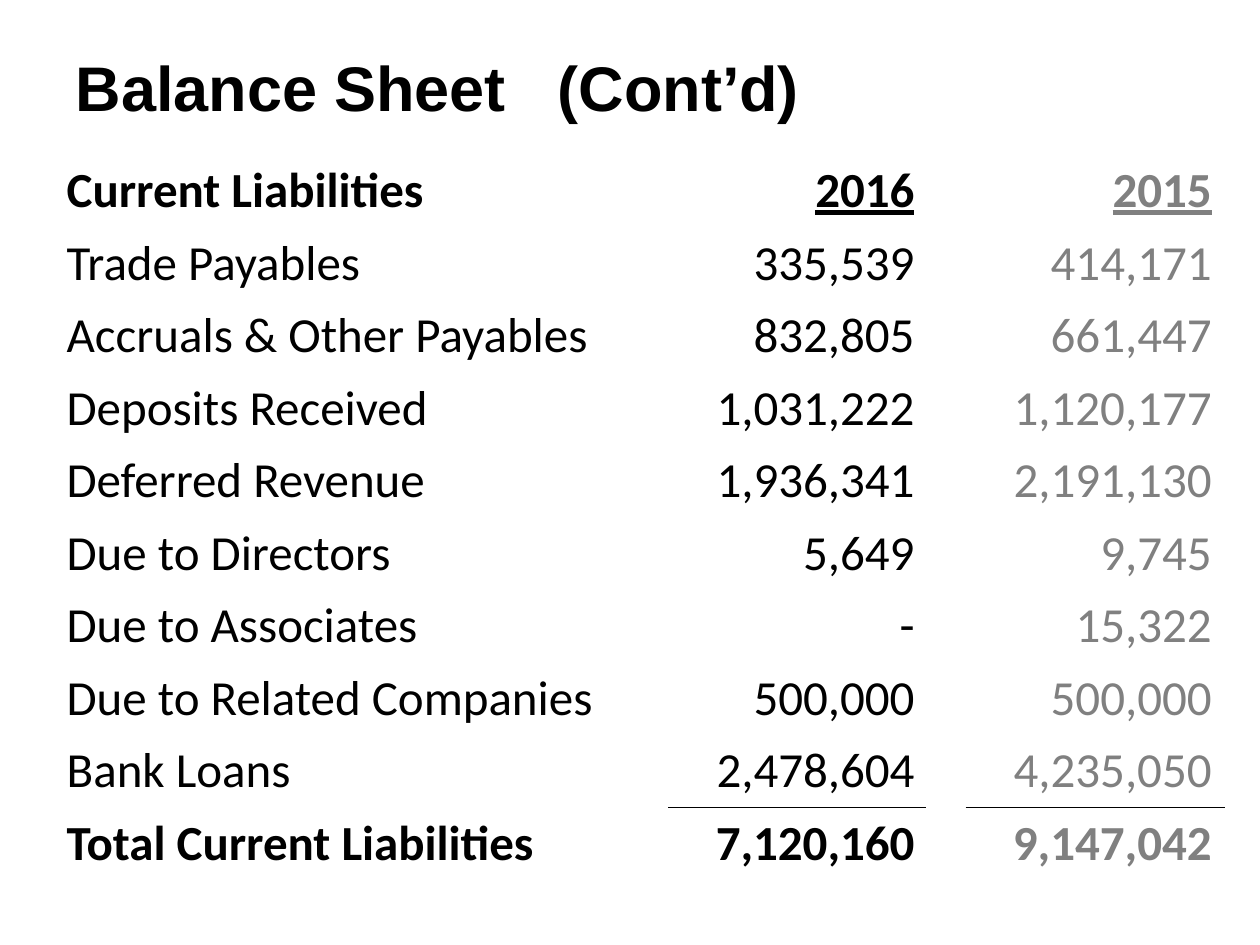
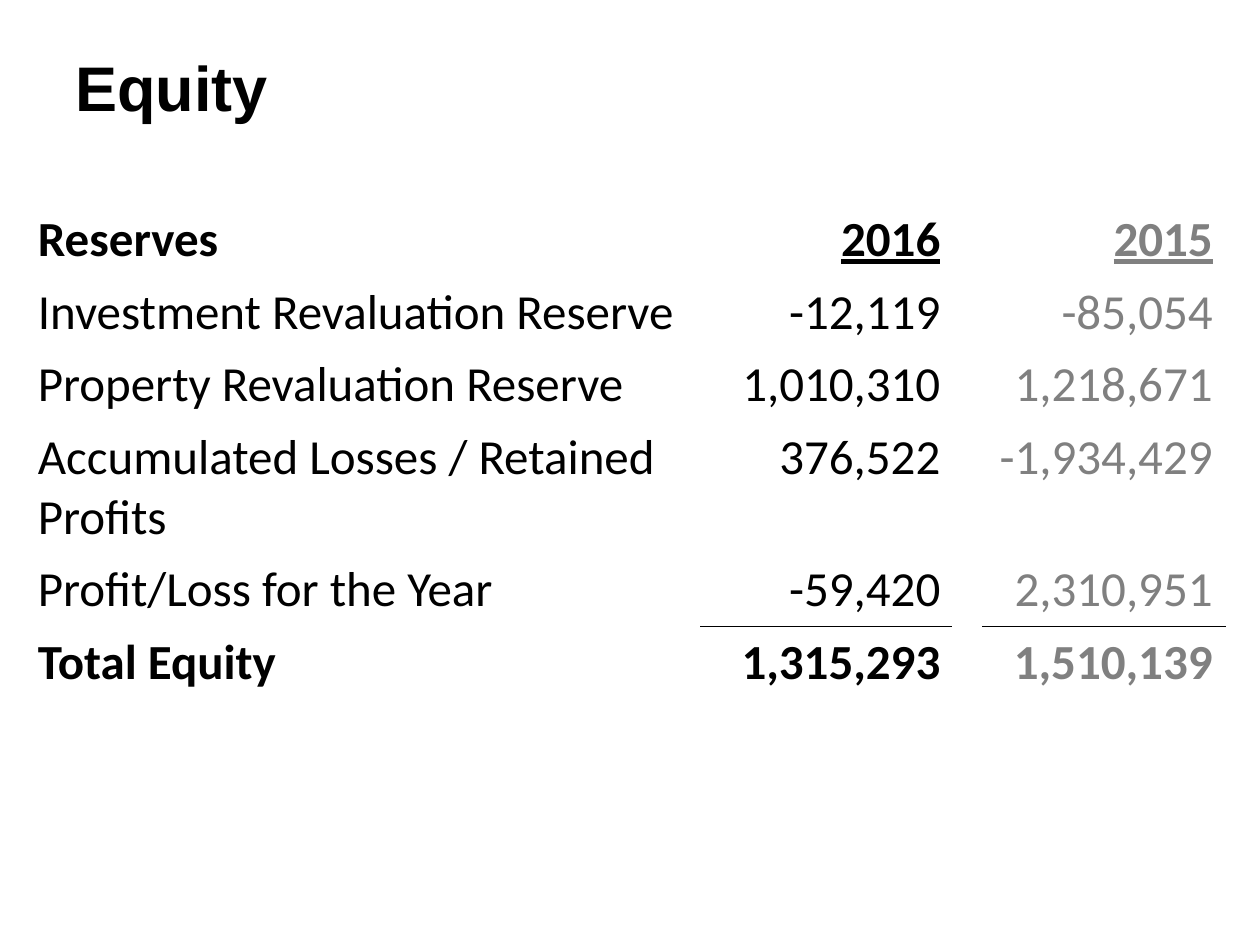
from dataclasses import dataclass

from lxml import etree
from pptx import Presentation
from pptx import table as tbl
from pptx import util as u
from pptx.dml import color
from pptx.enum import text
from pptx.oxml import ns
from pptx.presentation import Presentation as Deck
from pptx.slide import Slide

# Shared style
COLORS = {"current": "000000", "previous": "808080", "rule": "000000"}
TITLE_FONT, TABLE_FONT = "Arial", "Calibri"
TITLE_SIZE, TABLE_SIZE = u.Pt(36), u.Pt(28)
ROW_HEIGHT = u.Cm(1.44)
RULE_WIDTH = u.Pt(1)
TITLE_TAB = u.Cm(9.72)
LABEL, CURRENT, PREVIOUS = 0, 1, 3  # table columns; column 2 is a gap


@dataclass(frozen=True)
class Statement:
    """A slide with a heading row, item rows and a total row."""
    title: str
    left: float
    top: float
    column_widths: tuple[float, ...]
    rows: tuple[tuple[str, str, str], ...]


STATEMENTS = (
    Statement("Balance Sheet\t(Cont’d)", 1.09, 3.12, (12.4, 5.2, 0.79, 5.2), (
        ("Current Liabilities", "2016", "2015"),
        ("Trade Payables", "335,539", "414,171"),
        ("Accruals & Other Payables", "832,805", "661,447"),
        ("Deposits Received", "1,031,222", "1,120,177"),
        ("Deferred Revenue", "1,936,341", "2,191,130"),
        ("Due to Directors", "5,649", "9,745"),
        ("Due to Associates", "-", "15,322"),
        ("Due to Related Companies", "500,000", "500,000"),
        ("Bank Loans", "2,478,604", "4,235,050"),
        ("Total Current Liabilities", "7,120,160", "9,147,042"),
    )),
    Statement("Equity", 0.51, 4.11, (13.62, 5.08, 0.61, 4.88), (
        ("Reserves", "2016", "2015"),
        ("Investment Revaluation Reserve", "-12,119", "-85,054"),
        ("Property Revaluation Reserve", "1,010,310", "1,218,671"),
        ("Accumulated Losses / Retained Profits", "376,522", "-1,934,429"),
        ("Profit/Loss for the Year", "-59,420", "2,310,951"),
        ("Total Equity", "1,315,293", "1,510,139"),
    )),
)


def add_title(slide: Slide, title: str) -> None:
    shape = slide.shapes.title
    shape.left, shape.top = u.Cm(1.27), u.Cm(0.74)
    shape.width, shape.height = u.Cm(24.13), u.Cm(2.01)
    frame = shape.text_frame
    frame.text = title
    frame.vertical_anchor = text.MSO_ANCHOR.MIDDLE
    paragraph = frame.paragraphs[0]
    paragraph.alignment = text.PP_ALIGN.LEFT
    if "\t" in title:
        properties = paragraph._p.get_or_add_pPr()
        tabs = etree.SubElement(properties, ns.qn("a:tabLst"))
        etree.SubElement(tabs, ns.qn("a:tab"), pos=str(int(TITLE_TAB)), algn="l")
    font = paragraph.font
    font.name, font.size, font.bold = TITLE_FONT, TITLE_SIZE, True
    font.color.rgb = color.RGBColor.from_string(COLORS["current"])


def add_rule(cell: tbl._Cell, side: str) -> None:
    """Draw a border on one side of a cell: lnT or lnB."""
    line = etree.Element(ns.qn(f"a:{side}"), w=str(int(RULE_WIDTH)))
    fill = etree.SubElement(line, ns.qn("a:solidFill"))
    etree.SubElement(fill, ns.qn("a:srgbClr"), val=COLORS["rule"])
    cell._tc.get_or_add_tcPr().insert(0, line)


def fill_cell(cell: tbl._Cell, value: str, column: int,
              bold: bool, underline: bool) -> None:
    cell.text = value
    paragraph = cell.text_frame.paragraphs[0]
    is_label = column == LABEL
    paragraph.alignment = text.PP_ALIGN.LEFT if is_label else text.PP_ALIGN.RIGHT
    font = paragraph.font
    font.name, font.size, font.bold = TABLE_FONT, TABLE_SIZE, bold
    font.underline = underline and not is_label
    shade = "previous" if column == PREVIOUS else "current"
    font.color.rgb = color.RGBColor.from_string(COLORS[shade])


def add_statement_table(slide: Slide, statement: Statement) -> None:
    count, widths = len(statement.rows), statement.column_widths
    table = slide.shapes.add_table(
        count, len(widths), u.Cm(statement.left), u.Cm(statement.top),
        u.Cm(sum(widths)), ROW_HEIGHT * count).table
    table.first_row = table.horz_banding = False
    for column, width in zip(table.columns, widths):
        column.width = u.Cm(width)
    for cell in table.iter_cells():
        cell.fill.background()

    # Headings and totals are bold; years are underlined
    last = count - 1
    for index, values in enumerate(statement.rows):
        for column, value in zip((LABEL, CURRENT, PREVIOUS), values):
            fill_cell(table.cell(index, column), value, column,
                      bold=index in (0, last), underline=index == 0)

    # Rules above the totals
    for column in (CURRENT, PREVIOUS):
        add_rule(table.cell(last - 1, column), "lnB")
        add_rule(table.cell(last, column), "lnT")


def add_statement(presentation: Deck, statement: Statement) -> None:
    title_only = presentation.slide_layouts[5]
    slide = presentation.slides.add_slide(title_only)
    add_title(slide, statement.title)
    add_statement_table(slide, statement)


def main() -> None:
    presentation = Presentation()
    presentation.slide_width, presentation.slide_height = u.Cm(25.4), u.Cm(19.05)
    for statement in STATEMENTS:
        add_statement(presentation, statement)
    presentation.save("out.pptx")


if __name__ == "__main__":
    main()
